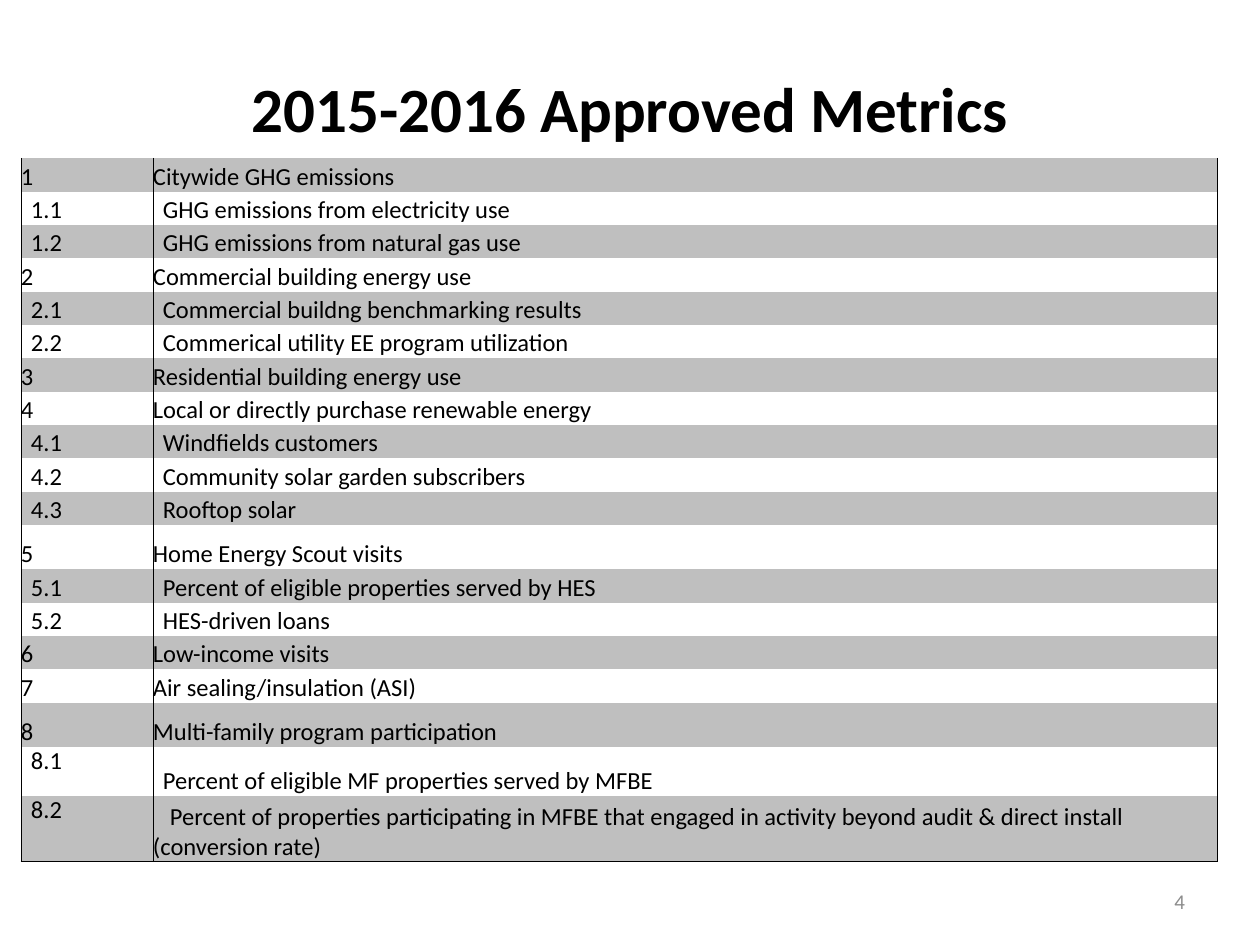
"""Build the slide that lists the approved 2015-2016 metrics."""
from lxml.etree import SubElement
from pptx import Presentation
from pptx.dml.color import RGBColor
from pptx.enum.text import MSO_ANCHOR, PP_ALIGN
from pptx.oxml.ns import qn
from pptx.util import Pt

PX = 914400 // 126
BLACK = RGBColor(0x00, 0x00, 0x00)
BAND = RGBColor(0xBF, 0xBF, 0xBF)
MUTED = RGBColor(0x8C, 0x8C, 0x8C)

METRICS = [
    ("1", "Citywide GHG emissions"),
    ("1.1", "GHG emissions from electricity use"),
    ("1.2", "GHG emissions from natural gas use"),
    ("2", "Commercial building energy use"),
    ("2.1", "Commercial buildng benchmarking results"),
    ("2.2", "Commerical utility EE program utilization"),
    ("3", "Residential building energy use"),
    ("4", "Local or directly purchase renewable energy"),
    ("4.1", "Windfields customers"),
    ("4.2", "Community solar garden subscribers"),
    ("4.3", "Rooftop solar"),
    ("5", "Home Energy Scout visits"),
    ("5.1", "Percent of eligible properties served by HES"),
    ("5.2", "HES-driven loans"),
    ("6", "Low-income visits"),
    ("7", "Air sealing/insulation (ASI)"),
    ("8", "Multi-family program participation"),
    ("8.1", "Percent of eligible MF properties served by MFBE"),
    ("8.2", "Percent of properties participating in MFBE that engaged in "
            "activity beyond audit & direct install (conversion rate)"),
]
TALL_ROWS = {"5": 44, "8": 44, "8.1": 49, "8.2": 66}
TOP_ANCHORED = ("8.1", "8.2")
WRAPPED = "8.2"
SUB_INDENT = 10
WRAPPED_INDENT = 17


class MetricsSlide:
    """Hold the style and the slide being filled."""

    def __init__(self, slide, font="Calibri"):
        self.slide = slide
        self.font = font

    def style(self, paragraph, size, color, bold=False):
        for run in paragraph.runs:
            run.font.name = self.font
            run.font.size = Pt(size)
            run.font.color.rgb = color
            run.font.bold = bold

    def text(self, words, box, size, color, align, inset, bold=False, before=0):
        frame = self.slide.shapes.add_textbox(*(n * PX for n in box)).text_frame
        frame.word_wrap = True
        frame.vertical_anchor = MSO_ANCHOR.TOP if before else MSO_ANCHOR.MIDDLE
        frame.margin_left = frame.margin_right = inset * PX
        frame.margin_top = frame.margin_bottom = inset * PX
        frame.text = words
        paragraph = frame.paragraphs[0]
        paragraph.alignment = align
        paragraph.space_before = Pt(before)
        self.style(paragraph, size, color, bold)

    def borders(self, cell, drawn):
        properties = cell._tc.get_or_add_tcPr()
        for side in "LRTB":
            line = SubElement(properties, qn(f"a:ln{side}"), w=str(Pt(0.5)))
            if side in drawn:
                fill = SubElement(line, qn("a:solidFill"))
                SubElement(fill, qn("a:srgbClr"), val=str(BLACK))
            else:
                SubElement(line, qn("a:noFill"))

    def cell(self, cell, words, left, banded, last, anchor):
        cell.margin_left = left * PX
        cell.margin_right = cell.margin_top = cell.margin_bottom = 0
        cell.vertical_anchor = anchor
        cell.text_frame.text = words
        self.style(cell.text_frame.paragraphs[0], 14, BLACK)
        self.borders(cell, "LRB" if last else "LR")
        if banded:
            cell.fill.solid()
            cell.fill.fore_color.rgb = BAND
        else:
            cell.fill.background()

    def table(self, metrics, left, top, widths):
        heights = [TALL_ROWS.get(number, 34 if row % 3 == 0 else 33)
                   for row, (number, _) in enumerate(metrics)]
        table = self.slide.shapes.add_table(
            len(metrics), len(widths), left * PX, top * PX,
            sum(widths) * PX, sum(heights) * PX).table
        table.first_row = table.horz_banding = False
        for column, width in zip(table.columns, widths):
            column.width = width * PX
        for row, (number, metric) in enumerate(metrics):
            table.rows[row].height = heights[row] * PX
            indent = SUB_INDENT if "." in number else 0
            banded, last = row % 2 == 0, row == len(metrics) - 1
            anchor = MSO_ANCHOR.TOP if number in TOP_ANCHORED else MSO_ANCHOR.BOTTOM
            self.cell(table.cell(row, 0), number, indent, banded, last, anchor)
            metric_cell = table.cell(row, 1)
            wrapped = number == WRAPPED
            self.cell(metric_cell, metric, 0 if wrapped else indent,
                      banded, last, MSO_ANCHOR.BOTTOM)
            if wrapped:
                properties = metric_cell.text_frame.paragraphs[0]._p.get_or_add_pPr()
                properties.set("indent", str(WRAPPED_INDENT * PX))


def main():
    deck = Presentation()
    deck.slide_width, deck.slide_height = 1260 * PX, 945 * PX
    page = MetricsSlide(deck.slides.add_slide(deck.slide_layouts[6]))
    page.text("2015-2016 Approved Metrics", (63, 53, 1134, 96), 36, BLACK,
              PP_ALIGN.CENTER, 16, bold=True, before=3.6)
    page.table(METRICS, 21, 158, (132, 1065))
    page.text("4", (903, 876, 294, 50), 12, MUTED, PP_ALIGN.RIGHT, 12)
    deck.save("out.pptx")


if __name__ == "__main__":
    main()
